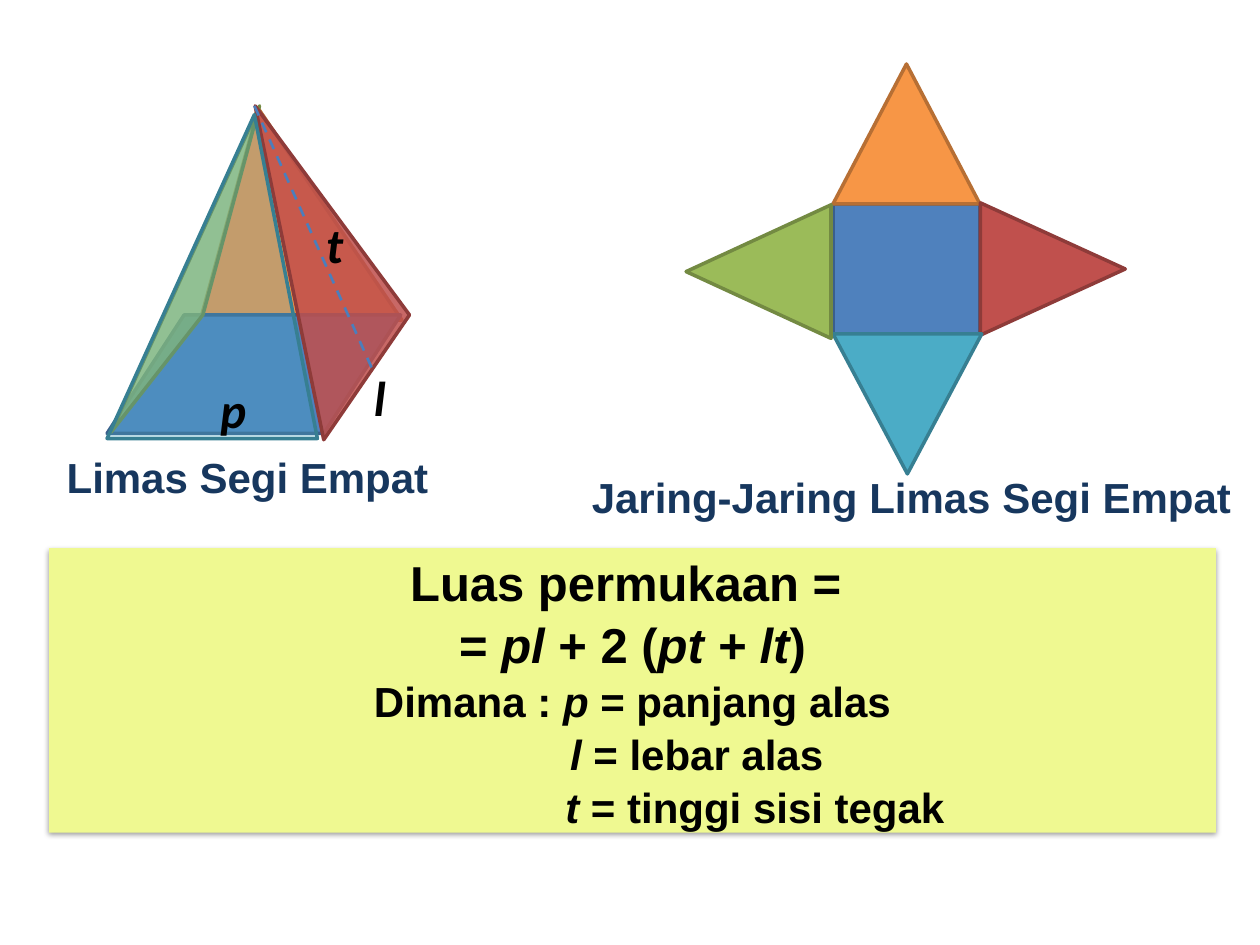
import dataclasses

import lxml.etree
import pptx
import pptx.dml.color
import pptx.enum.dml
import pptx.enum.shapes
import pptx.enum.text
import pptx.oxml.ns
import pptx.util

Pt = pptx.util.Pt
SHAPE = pptx.enum.shapes.MSO_SHAPE
CENTER = pptx.enum.text.PP_ALIGN.CENTER
MIDDLE = pptx.enum.text.MSO_ANCHOR.MIDDLE


@dataclasses.dataclass(frozen=True)
class Theme:
    blue: tuple = ("4F81BD", "3A5F8C")
    orange: tuple = ("F79646", "B76F34")
    red: tuple = ("C0504D", "8E3B39")
    teal: tuple = ("4BACC6", "377F92")
    green: tuple = ("9BBB59", "738A42")
    height_line: str = "4B7EBC"
    caption: str = "17375E"
    panel: str = "EFF991"
    text: str = "000000"
    heading_size: int = 28
    body_size: int = 24
    text_font: str = "Arial"
    symbol_font: str = "Calibri"


def color(value):
    return pptx.dml.color.RGBColor.from_string(value)


def add_element(parent, tag, **attributes):
    element = lxml.etree.SubElement(parent, pptx.oxml.ns.qn(tag))
    for name, value in attributes.items():
        element.set(name, str(value))
    return element


def write_text(paragraph, text, size, font, fill, italic=False):
    run = paragraph.add_run()
    run.text = text
    run.font.size = Pt(size)
    run.font.name = font
    run.font.bold = True
    run.font.italic = italic
    run.font.color.rgb = color(fill)


class SlideBuilder:
    def __init__(self, slide, theme):
        self.slide = slide
        self.theme = theme

    def paint(self, shape, colors, opacity=100):
        fill, outline = colors
        shape.shadow.inherit = False
        shape.fill.solid()
        shape.fill.fore_color.rgb = color(fill)
        shape.line.color.rgb = color(outline)
        shape.line.width = Pt(2)
        if opacity < 100:
            swatch = shape.fill._xPr.find(".//" + pptx.oxml.ns.qn("a:srgbClr"))
            add_element(swatch, "a:alpha", val=opacity * 1000)

    def add_preset(self, kind, frame, colors, rotation=0):
        shape = self.slide.shapes.add_shape(kind, *map(Pt, frame))
        shape.rotation = rotation
        self.paint(shape, colors)
        return shape

    def add_face(self, corners, colors, opacity=100):
        points = [(Pt(x), Pt(y)) for x, y in corners]
        builder = self.slide.shapes.build_freeform(*points[0], scale=1.0)
        builder.add_line_segments(points[1:], close=True)
        self.paint(builder.convert_to_shape(), colors, opacity)

    def add_label(self, text, frame, wrap=True, alignment=None, **text_format):
        box = self.slide.shapes.add_textbox(*map(Pt, frame))
        box.text_frame.word_wrap = wrap
        paragraph = box.text_frame.paragraphs[0]
        paragraph.alignment = alignment
        write_text(paragraph, text, **text_format)

    def add_dashed_line(self, start, end):
        line = self.slide.shapes.add_connector(
            pptx.enum.shapes.MSO_CONNECTOR.STRAIGHT, *map(Pt, start + end))
        line.line.color.rgb = color(self.theme.height_line)
        line.line.width = Pt(1.5)
        line.line.dash_style = pptx.enum.dml.MSO_LINE.DASH
        add_element(line._element.spPr, "a:effectLst")

    def add_formula_panel(self, frame, lines):
        theme = self.theme
        panel = self.add_preset(SHAPE.RECTANGLE, frame, (theme.panel, theme.panel))
        panel.line.fill.background()
        effects = panel._element.spPr.find(pptx.oxml.ns.qn("a:effectLst"))
        shadow = add_element(effects, "a:outerShdw", blurRad=Pt(3.1), dist=Pt(1.6),
                             dir=90 * 60000, rotWithShape=0)
        swatch = add_element(shadow, "a:srgbClr", val=theme.text)
        add_element(swatch, "a:alpha", val=38000)
        text_frame = panel.text_frame
        text_frame.word_wrap = True
        text_frame.vertical_anchor = MIDDLE
        for index, (size, indent, pieces) in enumerate(lines):
            paragraph = text_frame.add_paragraph() if index else text_frame.paragraphs[0]
            paragraph.alignment = CENTER
            paragraph.line_spacing = 1.05
            paragraph._p.get_or_add_pPr().set("marL", str(Pt(indent)))
            for text, italic in pieces:
                write_text(paragraph, text, size=size, font=theme.text_font,
                           fill=theme.text, italic=italic)


def draw_net(builder):
    theme = builder.theme
    builder.add_preset(SHAPE.RECTANGLE, (476, 116.5, 84, 74), theme.blue)
    for frame, colors, rotation in (
        ((476, 36.6, 84, 80), theme.orange, 0),
        ((563.8, 112.3, 75.6, 82.8), theme.red, 90),
        ((476, 190.8, 85, 80), theme.teal, 180),
        ((395.3, 113.8, 76.3, 82.8), theme.green, 270),
    ):
        builder.add_preset(SHAPE.ISOSCELES_TRIANGLE, frame, colors, rotation)


def draw_pyramid(builder):
    theme = builder.theme
    builder.add_face([(114.5, 182.9), (147.6, 61.9), (229.7, 182.9)], theme.orange)
    base = builder.add_preset(SHAPE.PARALLELOGRAM, (61.2, 180, 167.8, 67.7), theme.blue)
    base.adjustments[0] = 0.65
    for corners, colors, opacity in (
        ([(63.4, 247), (148.3, 60.5), (115.9, 180)], theme.green, 78),
        ([(185, 251.3), (145.8, 60.5), (234, 180)], theme.red, 86),
        ([(61.2, 250.6), (145.4, 65.5), (181.4, 250.6)], theme.teal, 30),
    ):
        builder.add_face(corners, colors, opacity)
    for symbol, left, top in (("t", 179.3, 118.8), ("l", 206.6, 206.6), ("p", 118.8, 213.1)):
        builder.add_label(symbol, (left, top, 72, 41), size=theme.heading_size,
                          font=theme.symbol_font, fill=theme.text, italic=True)
    builder.add_dashed_line((145.4, 60.5), (213.1, 211.7))


def main():
    presentation = pptx.Presentation()
    presentation.slide_width = Pt(720)
    presentation.slide_height = Pt(540)
    slide = presentation.slides.add_slide(presentation.slide_layouts[6])
    theme = Theme()
    builder = SlideBuilder(slide, theme)

    draw_net(builder)
    caption = dict(size=theme.body_size, font=theme.text_font, fill=theme.caption)
    builder.add_label("Limas Segi Empat", (31, 254.2, 223.2, 36), wrap=False, **caption)
    builder.add_label("Jaring-Jaring Limas Segi Empat", (241.2, 265.7, 559.4, 36),
                      alignment=CENTER, **caption)
    builder.add_formula_panel((28.1, 313.2, 666.7, 162.7), [
        (theme.heading_size, 0, [("Luas permukaan = ", False)]),
        (theme.heading_size, 0, [("= ", False), ("pl", True), (" + 2 (", False),
                                 ("pt + lt", True), (")", False)]),
        (theme.body_size, 0, [("Dimana : ", False), ("p", True), (" = panjang alas", False)]),
        (theme.body_size, 73.4, [("l ", True), ("= lebar alas", False)]),
        (theme.body_size, 140, [("t", True), (" = tinggi sisi tegak", False)]),
    ])
    draw_pyramid(builder)
    presentation.save("out.pptx")


if __name__ == "__main__":
    main()
